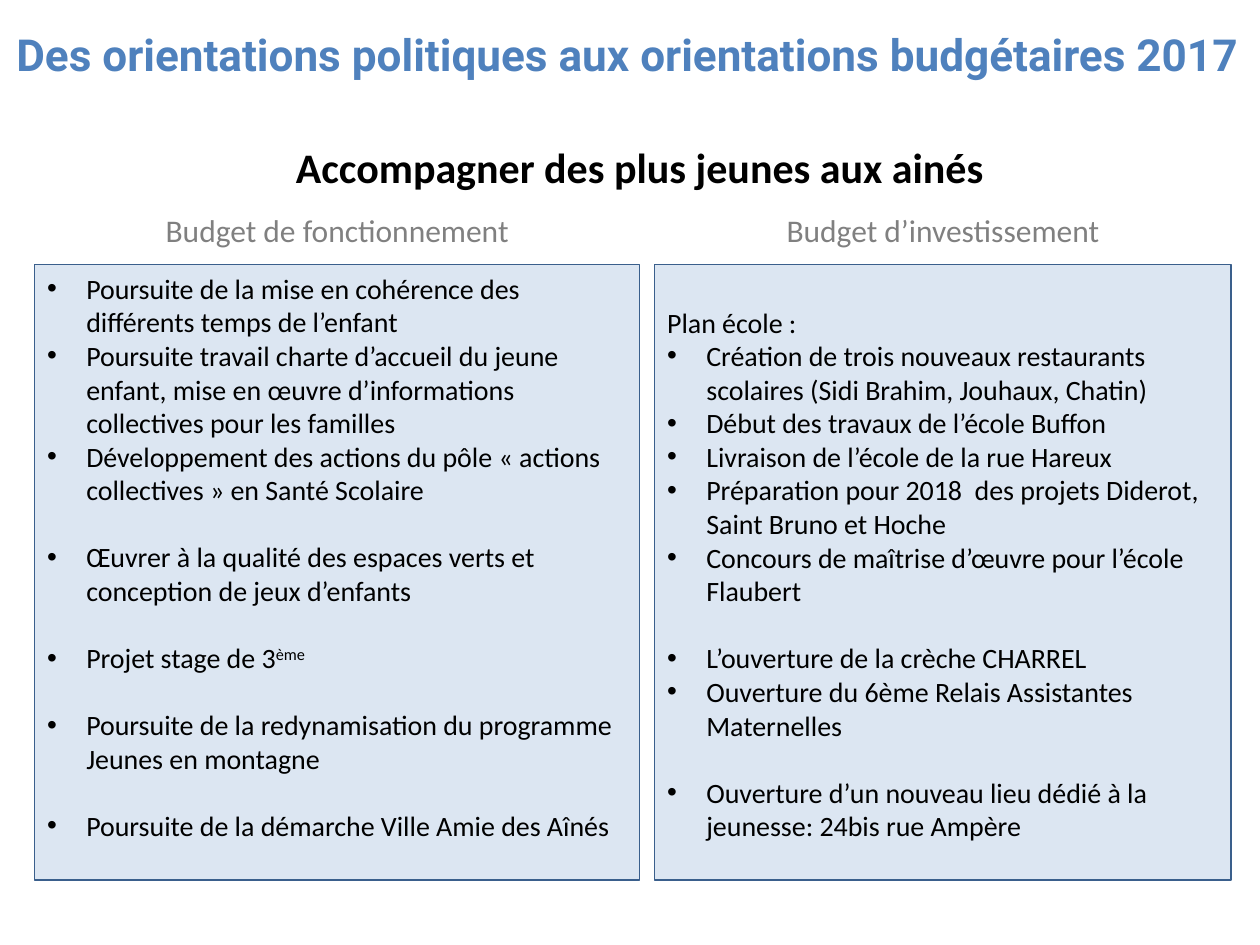
import dataclasses

import lxml.etree
import pptx
import pptx.dml.color
import pptx.enum.shapes
import pptx.enum.text
import pptx.oxml.ns
import pptx.util

Cm = pptx.util.Cm
Pt = pptx.util.Pt


@dataclasses.dataclass(frozen=True)
class Theme:
    """Colours, fonts and type sizes of the slide."""

    title_color: str = "4F81BD"
    text_color: str = "000000"
    label_color: str = "808080"
    panel_fill: str = "DCE6F2"
    panel_line: str = "3A5F8C"
    title_font: str = "Roboto"
    body_font: str = "Calibri"
    title_size: float = 25.2
    theme_size: float = 24
    label_size: float = 18
    item_size: float = 16
    group_gap: float = 19.2
    bullet_indent: float = 0.79


class BudgetSlide:
    """Holds the theme and the current slide, and adds its elements."""

    def __init__(self, slide, theme):
        self.slide = slide
        self.theme = theme

    def style(self, paragraph, size, color, font=None, bold=False):
        """Set the font of a whole paragraph."""
        paragraph.font.name = font or self.theme.body_font
        paragraph.font.size = Pt(size)
        paragraph.font.bold = bold
        paragraph.font.color.rgb = pptx.dml.color.RGBColor.from_string(color)

    def heading(self, text, left, top, width, height, size, color, font=None, bold=False, inset=0.13):
        """Add one centred line of text."""
        frame = self.slide.shapes.add_textbox(Cm(left), Cm(top), Cm(width), Cm(height)).text_frame
        frame.word_wrap = True
        frame.margin_top = Cm(inset)
        line = frame.paragraphs[0]
        line.text = text
        line.alignment = pptx.enum.text.PP_ALIGN.CENTER
        self.style(line, size, color, font, bold)

    def bullet(self, paragraph):
        """Give a paragraph a bullet and a hanging indent."""
        properties = paragraph._p.get_or_add_pPr()
        indent = Cm(self.theme.bullet_indent)
        properties.set("marL", str(indent))
        properties.set("indent", str(-indent))
        qn = pptx.oxml.ns.qn
        lxml.etree.SubElement(properties, qn("a:buFont")).set("typeface", "Arial")
        lxml.etree.SubElement(properties, qn("a:buChar")).set("char", "•")

    def item(self, paragraph, text):
        """Write a list entry; a part after a caret is superscript."""
        base, _, raised = text.partition("^")
        paragraph.add_run().text = base
        if raised:
            suffix = paragraph.add_run()
            suffix.text = raised
            suffix._r.get_or_add_rPr().set("baseline", "30000")
        paragraph.alignment = pptx.enum.text.PP_ALIGN.LEFT
        self.style(paragraph, self.theme.item_size, self.theme.text_color)

    def panel(self, groups, left, top, width, height, inset, intro=None):
        """Add a framed panel of bulleted groups, with an optional intro line."""
        panel = self.slide.shapes.add_shape(
            pptx.enum.shapes.MSO_SHAPE.RECTANGLE, Cm(left), Cm(top), Cm(width), Cm(height))
        panel.shadow.inherit = False
        panel.fill.solid()
        panel.fill.fore_color.rgb = pptx.dml.color.RGBColor.from_string(self.theme.panel_fill)
        panel.line.color.rgb = pptx.dml.color.RGBColor.from_string(self.theme.panel_line)
        panel.line.width = Pt(0.75)
        frame = panel.text_frame
        frame.word_wrap = True
        frame.vertical_anchor = pptx.enum.text.MSO_ANCHOR.TOP
        frame.margin_top = Cm(inset)
        paragraph = frame.paragraphs[0]
        if intro:
            self.item(paragraph, intro)
            paragraph = frame.add_paragraph()
        for group_index, group in enumerate(groups):
            for entry_index, entry in enumerate(group):
                if group_index or entry_index:
                    paragraph = frame.add_paragraph()
                self.item(paragraph, entry)
                if group_index and not entry_index:
                    paragraph.space_before = Pt(self.theme.group_gap)
                self.bullet(paragraph)


OPERATING = [
    ["Poursuite de la mise en cohérence des différents temps de l’enfant",
     "Poursuite travail charte d’accueil du jeune enfant, mise en œuvre d’informations "
     "collectives pour les familles",
     "Développement des actions du pôle « actions collectives » en Santé Scolaire"],
    ["Œuvrer à la qualité des espaces verts et conception de jeux d’enfants"],
    ["Projet stage de 3^ème"],
    ["Poursuite de la redynamisation du programme Jeunes en montagne"],
    ["Poursuite de la démarche Ville Amie des Aînés"],
]
INVESTMENT = [
    ["Création de trois nouveaux restaurants scolaires (Sidi Brahim, Jouhaux, Chatin)",
     "Début des travaux de l’école Buffon",
     "Livraison de l’école de la rue Hareux",
     "Préparation pour 2018  des projets Diderot, Saint Bruno et Hoche",
     "Concours de maîtrise d’œuvre pour l’école Flaubert"],
    ["L’ouverture de la crèche CHARREL",
     "Ouverture du 6ème Relais Assistantes Maternelles"],
    ["Ouverture d’un nouveau lieu dédié à la jeunesse: 24bis rue Ampère"],
]


def main():
    """Build and save the slide."""
    deck = pptx.Presentation()
    deck.slide_width, deck.slide_height = Cm(25.4), Cm(19.05)
    theme = Theme()
    page = BudgetSlide(deck.slides.add_slide(deck.slide_layouts[6]), theme)
    page.heading("Accompagner des plus jeunes aux ainés", 1.47, 2.72, 22.86, 1.19,
                 theme.theme_size, theme.text_color, bold=True)
    columns = [
        ("Budget de fonctionnement", OPERATING, 0.7, 12.2, 0.13, None),
        ("Budget d’investissement", INVESTMENT, 13.2, 11.62, 0.81, "Plan école :"),
    ]
    for label, groups, left, width, inset, intro in columns:
        page.panel(groups, left, 5.34, width, 12.4, inset, intro)
        page.heading(label, left, 4.12, width, 1.02, theme.label_size, theme.label_color)
    page.heading("Des orientations politiques aux orientations budgétaires 2017", -0.05, 0, 25.4, 3.18,
                 theme.title_size, theme.title_color, theme.title_font, True, inset=0.55)
    deck.save("out.pptx")


if __name__ == "__main__":
    main()
